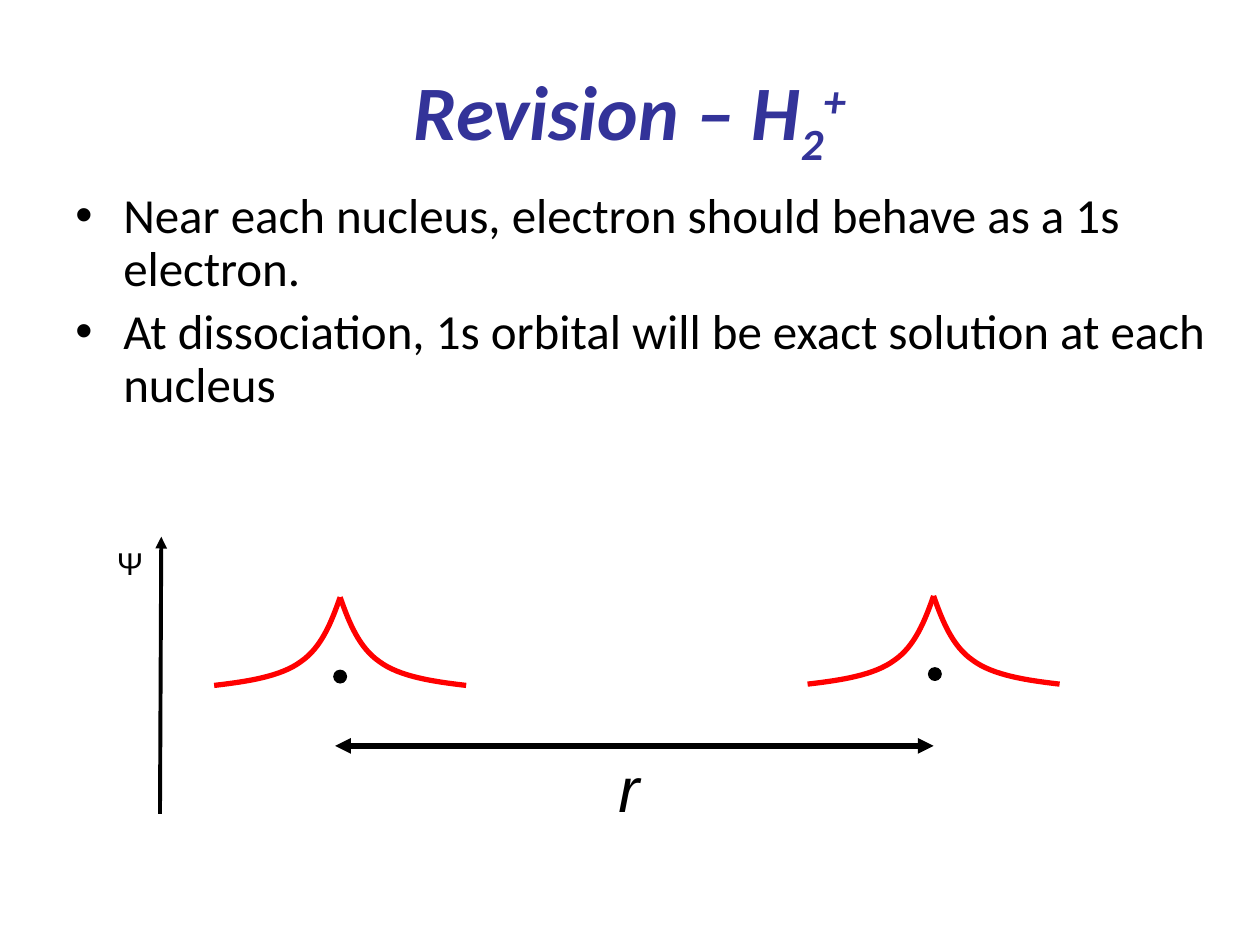
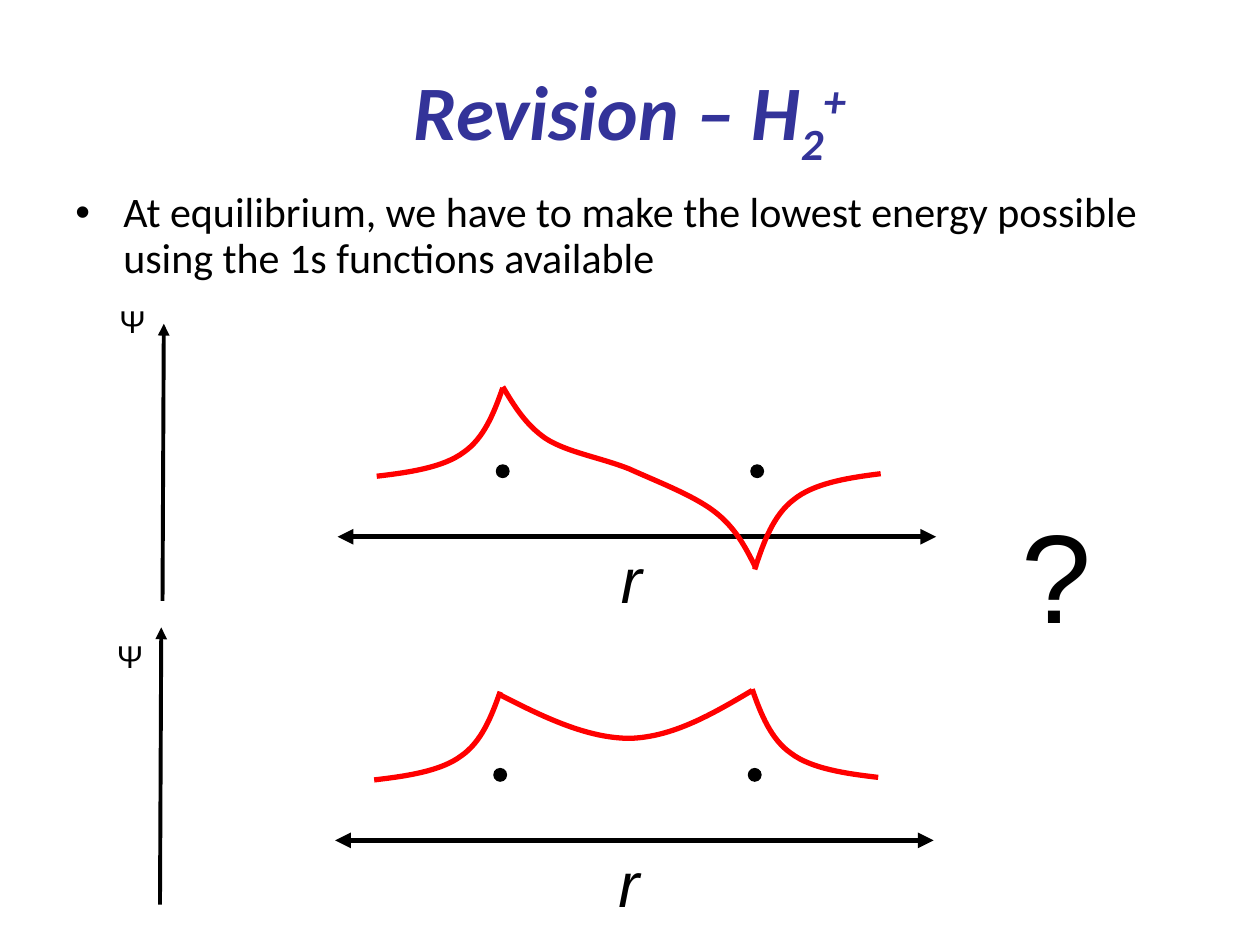
from lxml.etree import SubElement
from pptx import Presentation
from pptx.dml.color import RGBColor
from pptx.enum.shapes import MSO_CONNECTOR, MSO_SHAPE
from pptx.enum.text import MSO_ANCHOR, PP_ALIGN
from pptx.oxml import parse_xml
from pptx.oxml.ns import nsdecls, qn
from pptx.util import Pt

SCALE = 9144
BLACK, TITLE_BLUE, ORBITAL_RED = "000000", "333399", "FF0000"
TAIL = [(100, 70), (74, 67), (47, 63), (31, 51), (15, 40), (7, 20), (0, 0)]
TITLE_RUNS = [("Revision – H", None), ("2", "-25000"), ("+", "30000")]


def px(value):
    return round(value * SCALE)


def color(value):
    return RGBColor.from_string(value)


def text_box(slide, left, top, width, height, wrap=True):
    box = slide.shapes.add_textbox(px(left), px(top), px(width), px(height))
    box.text_frame.word_wrap = wrap
    return box.text_frame


def add_span(para, text, size, font="Arial", shade=BLACK, italic=False):
    span = para.add_run()
    span.text = text
    span.font.size = Pt(size)
    span.font.name = font
    span.font.italic = italic
    span.font.color.rgb = color(shade)
    return span


def label(slide, text, left, top, width, height, size, italic=False):
    frame = text_box(slide, left, top, width, height, False)
    add_span(frame.paragraphs[0], text, size, italic=italic)


def title(slide):
    frame = text_box(slide, 50, 30, 900, 125)
    frame.vertical_anchor = MSO_ANCHOR.MIDDLE
    para = frame.paragraphs[0]
    para.alignment = PP_ALIGN.CENTER
    for text, baseline in TITLE_RUNS:
        span = add_span(para, text, 44, "Calibri", TITLE_BLUE, True)
        span.font.bold = True
        if baseline:
            span.font._element.set("baseline", baseline)


def bullets(slide, size, lines):
    frame = text_box(slide, 50, 147, 928, 216)
    for index, line in enumerate(lines):
        para = frame.add_paragraph() if index else frame.paragraphs[0]
        para.line_spacing = 0.9
        para.space_before = Pt(size * 0.2)
        properties = para._p.get_or_add_pPr()
        properties.set("marL", str(px(38)))
        properties.set("indent", str(-px(38)))
        SubElement(properties, qn("a:buFont"), typeface="Arial")
        SubElement(properties, qn("a:buChar"), char="•")
        add_span(para, line, size, "Calibri")


def arrow(slide, start, end, weight, ends):
    line = slide.shapes.add_connector(MSO_CONNECTOR.STRAIGHT, *map(px, start + end))
    line.line.color.rgb = color(BLACK)
    line.line.width = Pt(weight)
    for name in ends:
        SubElement(line.line._get_or_add_ln(), qn(f"a:{name}"), type="triangle")
    SubElement(line._element.spPr, qn("a:effectLst"))


def nucleus(slide, left, top):
    dot = slide.shapes.add_shape(MSO_SHAPE.OVAL, px(left), px(top), px(10), px(10))
    dot.shadow.inherit = False
    dot.fill.solid()
    dot.fill.fore_color.rgb = color(BLACK)
    dot.line.color.rgb = color(BLACK)
    dot.line.width = Pt(0.75)


def curve(shapes, points):
    points = [(px(x), px(y)) for x, y in points]
    builder = shapes.build_freeform(*points[0])
    builder.add_line_segments(points[1:], close=False)
    outline = builder.convert_to_shape()
    outline.shadow.inherit = False
    outline.fill.background()
    outline.line.color.rgb = color(ORBITAL_RED)
    outline.line.width = Pt(3)
    steps = list(outline._element.iter(qn("a:lnTo")))
    for first in range(0, len(steps), 3):
        bend = parse_xml(f"<a:cubicBezTo {nsdecls('a')}/>")
        steps[first].addprevious(bend)
        for step in steps[first:first + 3]:
            bend.append(step[0])
            step.getparent().remove(step)


def tail(shapes, peak, side, height=70):
    x, y = peak
    curve(shapes, [(x + side * dx, y + dy * height / 70) for dx, dy in TAIL])


def diagram(slide, left, top, distance, psi_shift, nuclei):
    for x, y in nuclei:
        nucleus(slide, left + x, top + y)
    arrow(slide, (left + 44, top + 220), (left + 45, top), 2.25, ["tailEnd"])
    label(slide, "Ψ", left, top + psi_shift, 40, 40, 18)
    arrow(slide, (left + 183, top + distance), (left + 658, top + distance), 3,
          ["headEnd", "tailEnd"])
    label(slide, "r", left + 398, top + distance - 2, 37, 70, 36, True)


def separate_atoms(slide, left, top):
    diagram(slide, left, top, 166, 1, [(182, 106), (654, 104)])
    for x, y in [(187, 48), (658, 47)]:
        group = slide.shapes.add_group_shape()
        for side in (-1, 1):
            tail(group.shapes, (left + x, top + y), side)


def molecule(slide, left, top, psi_shift, right_peak, right_height, bond):
    diagram(slide, left, top, 169, psi_shift, [(309, 112), (511, 112)])
    tail(slide.shapes, (left + 314, top + 51), -1)
    tail(slide.shapes, (left + 514, top + right_peak), 1, right_height)
    curve(slide.shapes, [(left + x, top + y) for x, y in bond])


def new_slide(deck, size, lines):
    slide = deck.slides.add_slide(deck.slide_layouts[6])
    title(slide)
    bullets(slide, size, lines)
    return slide


def dissociation_slide(deck):
    slide = new_slide(deck, 28, [
        "Near each nucleus, electron should behave as a 1s electron.",
        "At dissociation, 1s orbital will be exact solution at each nucleus",
    ])
    separate_atoms(slide, 83, 426)


def equilibrium_slide(deck):
    slide = new_slide(deck, 24, [
        "At equilibrium, we have to make the lowest energy possible "
        "using the 1s functions available",
    ])
    bonding = [(313, 53), (348, 71), (383, 88), (417, 88),
               (451, 87), (482, 69), (514, 50)]
    antibonding = [(314, 50), (323, 65), (332, 80), (348, 91), (365, 102),
                   (391, 106), (414, 115), (436, 125), (465, 136), (482, 149),
                   (499, 162), (507, 178), (515, 194)]
    molecule(slide, 83, 498, 3, 49, 70, bonding)
    molecule(slide, 85, 257, -22, 195, -76, antibonding)
    label(slide, "?", 801, 390, 76, 130, 72)


def main():
    deck = Presentation()
    deck.slide_width, deck.slide_height = px(1000), px(750)
    dissociation_slide(deck)
    equilibrium_slide(deck)
    deck.save("out.pptx")


if __name__ == "__main__":
    main()
